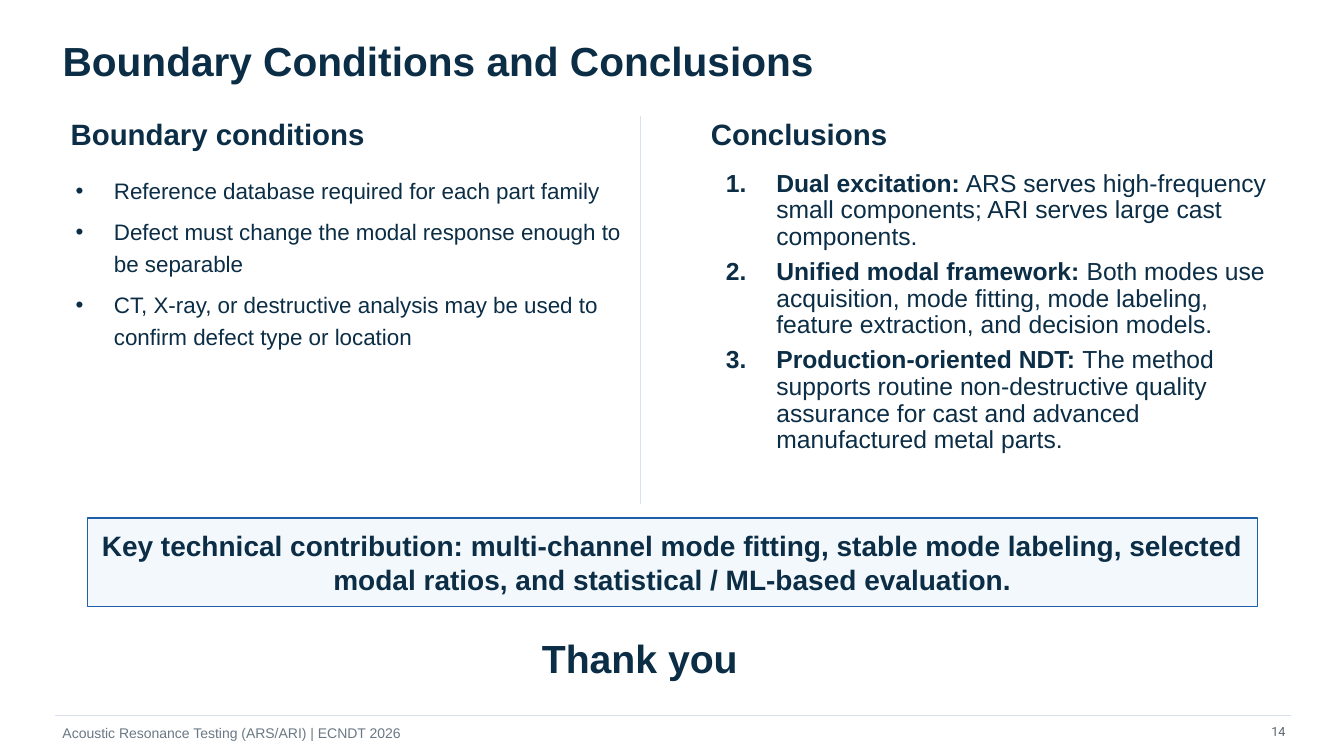
from lxml.etree import SubElement
from pptx import Presentation
from pptx.dml.color import RGBColor
from pptx.enum.shapes import MSO_CONNECTOR, MSO_SHAPE
from pptx.enum.text import MSO_ANCHOR, MSO_AUTO_SIZE, PP_ALIGN
from pptx.oxml.ns import qn
from pptx.util import Inches, Pt

NAVY = RGBColor(0x0B, 0x2D, 0x45)
BLUE = RGBColor(0x1E, 0x5F, 0xA8)
PALE = RGBColor(0xF3, 0xF8, 0xFC)
RULE = RGBColor(0xD9, 0xE2, 0xEC)
GRAY = RGBColor(0x6A, 0x78, 0x85)
SLATE = RGBColor(0x5A, 0x64, 0x6E)

LIMITS = [
    ("", "Reference database required for each part family"),
    ("", "Defect must change the modal response enough to be separable"),
    ("", "CT, X-ray, or destructive analysis may be used to confirm defect type or location"),
]
FINDINGS = [
    ("Dual excitation:", " ARS serves high-frequency small components; "
     "ARI serves large cast components."),
    ("Unified modal framework: ", "Both modes use acquisition, mode fitting, "
     "mode labeling, feature extraction, and decision models."),
    ("Production-oriented NDT: ", "The method supports routine non-destructive quality "
     "assurance for cast and advanced manufactured metal parts."),
]
KEY = ("Key technical contribution: multi-channel mode fitting, stable mode labeling, "
       "selected modal ratios, and statistical / ML-based evaluation.")


def place(shape, box):
    """Move a shape to a box in inches and clear its text frame margins."""
    shape.left, shape.top, shape.width, shape.height = map(Inches, box)
    frame = shape.text_frame
    frame.word_wrap = True
    frame.auto_size = MSO_AUTO_SIZE.NONE
    frame.vertical_anchor = MSO_ANCHOR.MIDDLE
    frame.margin_left = frame.margin_top = frame.margin_right = frame.margin_bottom = 0
    return frame


def style(para, size, color=NAVY, bold=False, face="Arial"):
    """Set the font of a paragraph."""
    font = para.font
    font.name, font.size, font.bold = face, Pt(size), bold
    font.color.rgb = color


def label(shape, box, text, size, color=NAVY, bold=True, face="Arial", align=PP_ALIGN.LEFT):
    """Write one styled paragraph in a shape."""
    para = place(shape, box).paragraphs[0]
    para.text = text
    para.alignment = align
    para.space_before = 0
    style(para, size, color, bold, face)


def items(shape, box, rows, size, indent, spacing, mark):
    """Fill a body placeholder with a bulleted or numbered list."""
    frame = place(shape, box)
    for i, (lead, text) in enumerate(rows):
        para = frame.add_paragraph() if i else frame.paragraphs[0]
        para.line_spacing = spacing
        para.space_before, para.space_after = 0, Pt(6)
        props = para._p.get_or_add_pPr()
        props.set("marL", str(Inches(indent)))
        props.set("indent", str(-Inches(indent)))
        tag, key, value = mark
        SubElement(props, qn(tag)).set(key, value)
        style(para, size)
        if lead:
            run = para.add_run()
            run.text = lead
            run.font.bold = True
        para.add_run().text = text


def column(head, body, box, title, inset, rows, *look):
    """Place a heading and, below it, its list within a column."""
    left, top, width, height = box
    dx, dy = inset
    label(head, (left, top, width, 0.35), title, 21)
    items(body, (left + dx, top + dy, 5.5, height - dy), rows, *look)


def rule(slide, x1, y1, x2, y2):
    """Draw a thin straight line."""
    line = slide.shapes.add_connector(MSO_CONNECTOR.STRAIGHT, *map(Inches, (x1, y1, x2, y2)))
    line.line.color.rgb = RULE
    line.line.width = Pt(1)
    SubElement(line._element.spPr, qn("a:effectLst"))


def note(slide, *args, **look):
    """Add a text box with one paragraph."""
    label(slide.shapes.add_textbox(0, 0, 0, 0), *args, **look)


def closing(slide, box):
    """Draw the key message panel and the thanks below it."""
    left, top, width, height = box
    panel = slide.shapes.add_shape(MSO_SHAPE.RECTANGLE, 0, 0, 0, 0)
    panel.shadow.inherit = False
    panel.fill.solid()
    panel.fill.fore_color.rgb = PALE
    panel.line.color.rgb = BLUE
    panel.line.width = Pt(1)
    label(panel, (left, top, width, 0.88), KEY, 20, align=PP_ALIGN.CENTER)
    note(slide, (left + 3.3, top + height - 0.5, 4.35, 0.5), "Thank you", 28,
         align=PP_ALIGN.CENTER)


def footer(slide, box):
    """Draw the footer rule, the talk name and the page number."""
    left, top, width, height = box
    rule(slide, left, top, left + width, top)
    note(slide, (left + 0.07, top + 0.08, 6, 0.18),
         "Acoustic Resonance Testing (ARS/ARI) | ECNDT 2026", 10, GRAY, False)
    note(slide, (left + width - 0.3, top + 0.07, 0.25, 0.18), "14", 9, SLATE, False,
         "Roboto", PP_ALIGN.RIGHT)


def main():
    """Build the slide and save it."""
    deck = Presentation()
    deck.slide_width, deck.slide_height = Inches(13.33), Inches(7.5)
    slide = deck.slides.add_slide(deck.slide_layouts[4])
    title, head, body, head2, body2 = slide.placeholders
    label(title, (0.62, 0.37, 12.1, 0.45), "Boundary Conditions and Conclusions", 29)
    column(head, body, (0.7, 1.15, 5.6, 2.57), "Boundary conditions", (0.05, 0.31),
           LIMITS, 16, 0.38, 1.2, ("a:buChar", "char", "•"))
    column(head2, body2, (7.05, 1.15, 5.6, 3.4), "Conclusions", (0.15, 0.5),
           FINDINGS, 17.6, 0.5, 0.9, ("a:buAutoNum", "type", "arabicPeriod"))
    rule(slide, 6.35, 1.15, 6.35, 5)
    closing(slide, (0.87, 5.14, 11.6, 1.64))
    footer(slide, (0.55, 7.1, 12.25, 0.4))
    deck.save("out.pptx")


if __name__ == "__main__":
    main()
